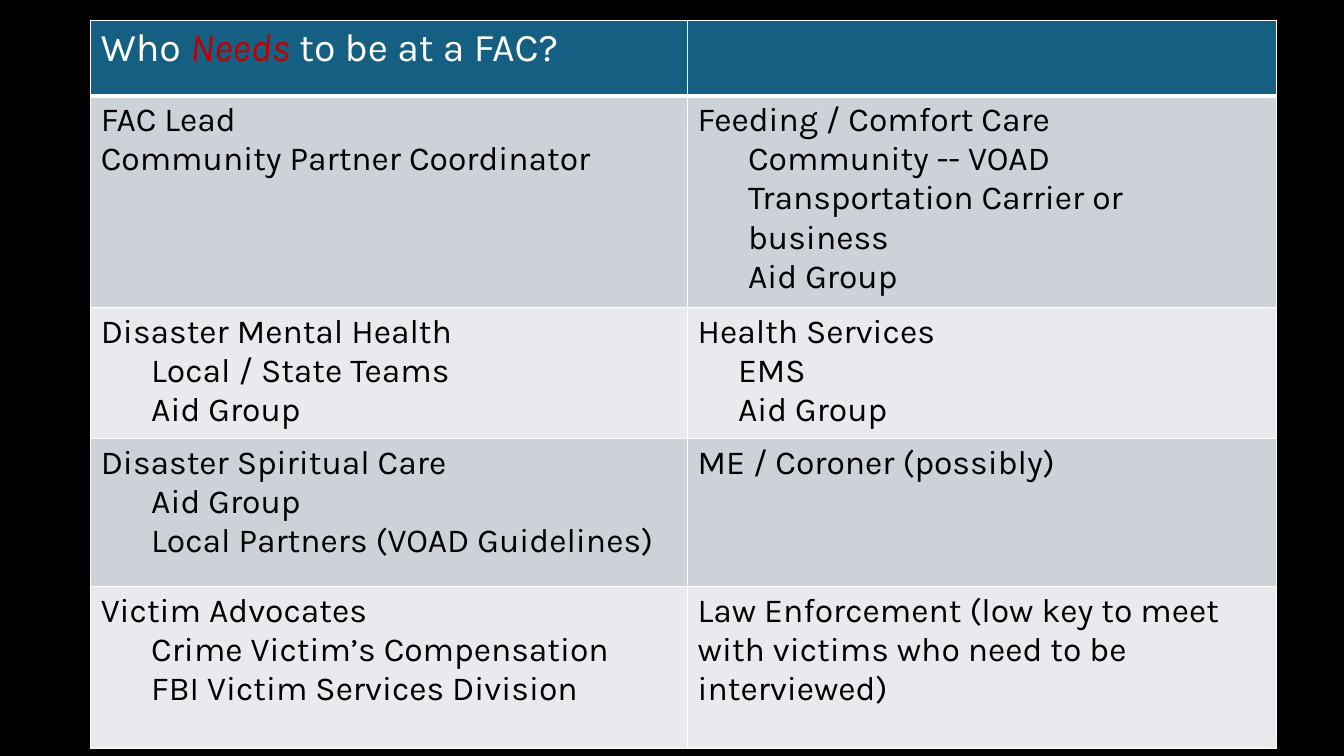
from pptx import Presentation
from pptx import util as u
from pptx.dml.color import RGBColor
from pptx.oxml import parse_xml
from pptx.oxml.ns import nsdecls

FONT = "Karla"
WHITE, BLACK, RED = "FFFFFF", "000000", "C00000"
BLUE, GREY, PALE = "156082", "CCD2D8", "E8EAED"
WIDTHS = [5.92, 5.84]
HEIGHTS = [0.75, 2.1, 1.3, 1.47, 1.61]

# Each cell holds its lines and the indent of its sub-lines.
GROUPS = [
    [(["FAC Lead", "Community Partner Coordinator"], 0),
     (["Feeding / Comfort Care", "Community -- VOAD",
       "Transportation Carrier or business", "Aid Group"], 0.5)],
    [(["Disaster Mental Health", "Local / State Teams", "Aid Group"], 0.5),
     (["Health Services", "EMS", "Aid Group"], 0.4)],
    [(["Disaster Spiritual Care", "Aid Group",
       "Local Partners (VOAD Guidelines)"], 0.5),
     (["ME / Coroner (possibly)"], 0)],
    [(["Victim Advocates", "Crime Victim’s Compensation",
       "FBI Victim Services Division"], 0.5),
     (["Law Enforcement (low key to meet with victims "
       "who need to be interviewed)"], 0)],
]


def color(code):
    return RGBColor.from_string(code)


def write(para, words, size=24, ink=BLACK, italic=False):
    run = para.add_run()
    run.text = words
    font = run.font
    font.name, font.size = FONT, u.Pt(size)
    font.bold, font.italic = False, italic
    font.color.rgb = color(ink)


def indent(para, depth):
    props = para._p.get_or_add_pPr()
    props.set("marL", str(u.Inches(depth)))
    props.set("indent", "0")
    para.level = 1


def paint(cell, fill, base=1):
    """Fill a cell and rule its four sides; base is the bottom width in points."""
    props = cell._tc.get_or_add_tcPr()
    for side, width in (("L", 1), ("R", 1), ("T", 1), ("B", base)):
        props.append(parse_xml(
            f'<a:ln{side} {nsdecls("a")} w="{u.Pt(width)}"><a:solidFill>'
            f'<a:srgbClr val="{WHITE}"/></a:solidFill></a:ln{side}>'))
    cell.fill.solid()
    cell.fill.fore_color.rgb = color(fill)


def fill_cell(cell, lines, depth):
    frame = cell.text_frame
    for i, line in enumerate(lines):
        para = frame.add_paragraph() if i else frame.paragraphs[0]
        if i and depth:
            indent(para, depth)
        write(para, line)


def add_grid(slide):
    grid = slide.shapes.add_table(
        len(HEIGHTS), len(WIDTHS), u.Inches(0.9), u.Inches(0.2),
        u.Inches(sum(WIDTHS)), u.Inches(sum(HEIGHTS))).table
    for col, width in zip(grid.columns, WIDTHS):
        col.width = u.Inches(width)
    for row, height in zip(grid.rows, HEIGHTS):
        row.height = u.Inches(height)
    return grid


def main():
    deck = Presentation()
    deck.slide_width, deck.slide_height = u.Inches(13.33), u.Inches(7.5)
    slide = deck.slides.add_slide(deck.slide_layouts[6])
    slide.background.fill.solid()
    slide.background.fill.fore_color.rgb = color(BLACK)

    grid = add_grid(slide)
    for cell in grid.rows[0].cells:
        paint(cell, BLUE, base=3)
    head = grid.cell(0, 0).text_frame.paragraphs[0]
    write(head, "Who ", size=28, ink=WHITE)
    write(head, "Needs", size=28, ink=RED, italic=True)
    write(head, " to be at a FAC?", size=28, ink=WHITE)

    for r, group in enumerate(GROUPS, 1):
        for c, (lines, depth) in enumerate(group):
            cell = grid.cell(r, c)
            paint(cell, GREY if r % 2 else PALE)
            fill_cell(cell, lines, depth)
    deck.save("out.pptx")


if __name__ == "__main__":
    main()
